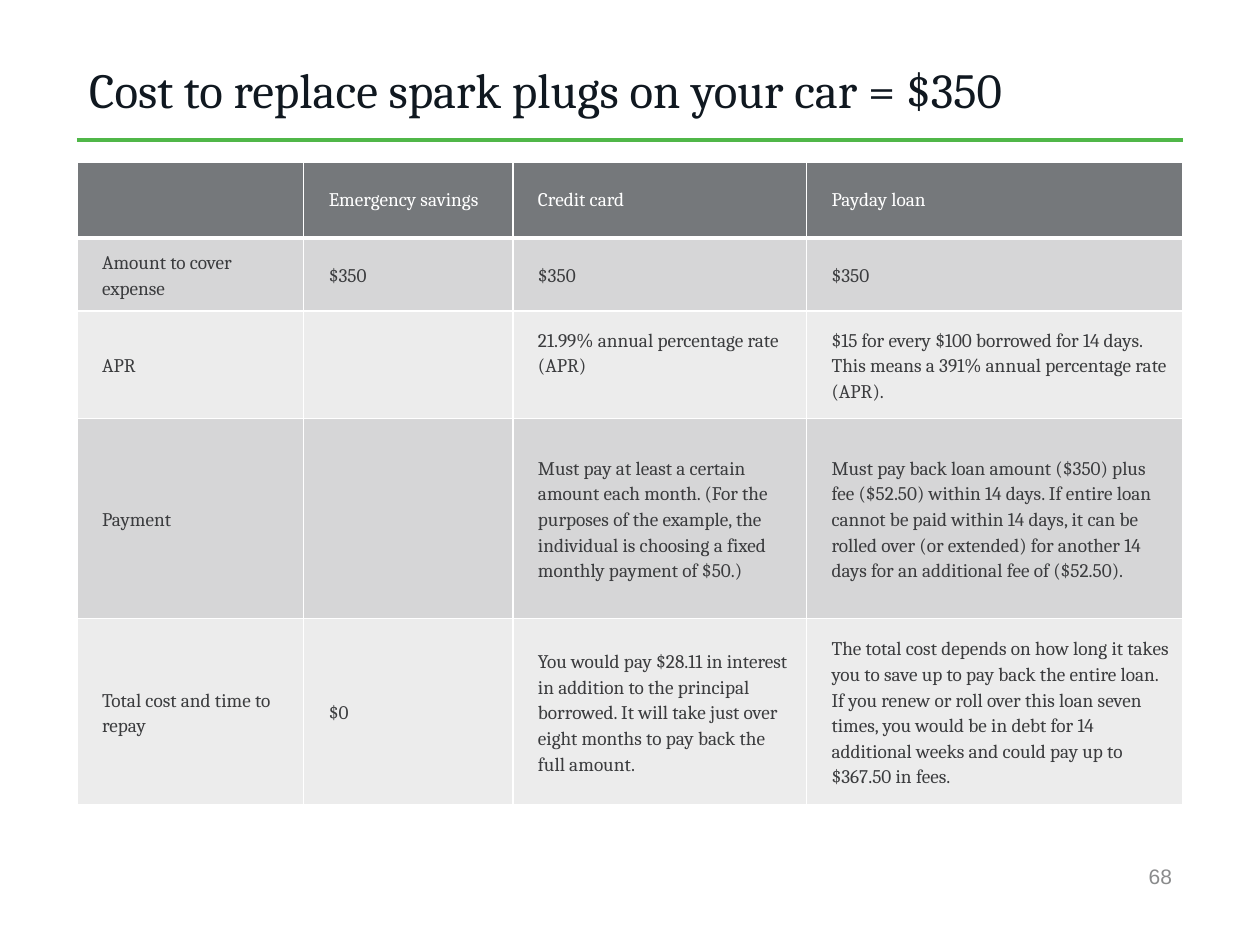
from lxml import etree
from pptx import Presentation
from pptx.dml.color import RGBColor
from pptx.enum.shapes import MSO_CONNECTOR
from pptx.enum.text import MSO_ANCHOR, PP_ALIGN
from pptx.oxml.ns import qn
from pptx.util import Inches, Pt

STRAIGHT = MSO_CONNECTOR.STRAIGHT
MIDDLE = MSO_ANCHOR.MIDDLE
LEFT, RIGHT = PP_ALIGN.LEFT, PP_ALIGN.RIGHT

COLORS = {
    "title": "101820",
    "rule": "50B748",
    "page": "8A8B8C",
    "header": "75787B",
    "dark_band": "D6D6D7",
    "light_band": "ECECEC",
    "body": "3B3C3E",
    "white": "FFFFFF",
}
COLUMN_WIDTHS = [1.8, 1.66, 2.33, 2.99]
ROW_HEIGHTS = [0.6, 0.58, 0.85, 1.59, 1.48]
COSTS = [
    ["", "Emergency savings", "Credit card", "Payday loan"],
    ["Amount to cover expense", "$350", "$350", "$350"],
    [
        "APR",
        "",
        "21.99% annual percentage rate (APR)",
        "$15 for every $100 borrowed for 14 days. This means a 391% annual "
        "percentage rate (APR).",
    ],
    [
        "Payment",
        "",
        "Must pay at least a certain amount each month. (For the purposes of the "
        "example, the individual is choosing a fixed monthly payment of $50.)",
        "Must pay back loan amount ($350) plus fee ($52.50) within 14 days. If "
        "entire loan cannot be paid within 14 days, it can be rolled over (or "
        "extended) for another 14 days for an additional fee of ($52.50).",
    ],
    [
        "Total cost and time to repay",
        "$0",
        "You would pay $28.11 in interest in addition to the principal borrowed. "
        "It will take just over eight months to pay back the full amount.",
        "The total cost depends on how long it takes you to save up to pay back "
        "the entire loan. If you renew or roll over this loan seven times, you "
        "would be in debt for 14 additional weeks and could pay up to $367.50 in "
        "fees.",
    ],
]
CREDIT_CARD_APR = (2, 2)


def rgb(name):
    """Return the named colour."""
    return RGBColor.from_string(COLORS[name])


def add_run(paragraph, text, size, color, face="Cambria"):
    """Add one styled run to a paragraph."""
    run = paragraph.add_run()
    run.text = text
    run.font.name = face
    run.font.size = Pt(size)
    run.font.color.rgb = rgb(color)


def add_label(slide, box, text, size, color, face, align):
    """Place one line of text, centred vertically in its box."""
    frame = slide.shapes.add_textbox(*map(Inches, box)).text_frame
    frame.word_wrap = True
    frame.vertical_anchor = MIDDLE
    frame.paragraphs[0].alignment = align
    add_run(frame.paragraphs[0], text, size, color, face)


def add_heading(slide, box):
    """Place the title with the green rule along the bottom of its box."""
    left, top, width, height = box
    text = "Cost to replace spark plugs on your car = $350"
    add_label(slide, box, text, 28, "title", "Cambria", LEFT)
    bottom = Inches(top + height)
    rule = slide.shapes.add_connector(
        STRAIGHT, Inches(left), bottom, Inches(left + width), bottom
    )
    rule.line.color.rgb = rgb("rule")
    rule.line.width = Pt(2)
    etree.SubElement(rule._element.spPr, qn("a:effectLst"))


def add_borders(cell, row):
    """Give a cell white borders, heavier between header and body."""
    widths = {
        "lnL": 1,
        "lnR": 1,
        "lnT": 3 if row == 1 else 1,
        "lnB": 3 if row == 0 else 1,
    }
    properties = cell._tc.get_or_add_tcPr()
    for side, width in widths.items():
        border = etree.SubElement(properties, qn(f"a:{side}"), w=str(Pt(width)))
        fill = etree.SubElement(border, qn("a:solidFill"))
        etree.SubElement(fill, qn("a:srgbClr"), val=COLORS["white"])


def fill_cell(cell, row, column, text):
    """Style one cell and write its text."""
    add_borders(cell, row)
    bands = ["light_band", "dark_band"]
    cell.fill.solid()
    cell.fill.fore_color.rgb = rgb("header" if row == 0 else bands[row % 2])
    cell.vertical_anchor = MIDDLE
    cell.margin_left, cell.margin_right = Inches(0.2), Inches(0.1)
    inset = 0 if row and column > 1 else 0.05
    cell.margin_top = cell.margin_bottom = Inches(inset)
    if (row, column) == CREDIT_CARD_APR:
        cell.margin_bottom = Inches(0.2)
    if text:
        paragraph = cell.text_frame.paragraphs[0]
        if row:
            paragraph.line_spacing = 1.15
        add_run(paragraph, text, 11, "body" if row else "white")


def add_cost_table(slide, box):
    """Place the table comparing three ways to pay."""
    table = slide.shapes.add_table(
        len(COSTS), len(COLUMN_WIDTHS), *map(Inches, box)
    ).table
    for column, width in zip(table.columns, COLUMN_WIDTHS):
        column.width = Inches(width)
    for row, height in zip(table.rows, ROW_HEIGHTS):
        row.height = Inches(height)
    for row, texts in enumerate(COSTS):
        for column, text in enumerate(texts):
            fill_cell(table.cell(row, column), row, column, text)


def main():
    """Build and save the slide."""
    deck = Presentation()
    deck.slide_width, deck.slide_height = Inches(10), Inches(7.5)
    slide = deck.slides.add_slide(deck.slide_layouts[6])
    add_heading(slide, (0.61, 0.3, 8.78, 0.81))
    add_cost_table(slide, (0.61, 1.29, sum(COLUMN_WIDTHS), sum(ROW_HEIGHTS)))
    add_label(slide, (6.23, 6.75, 3.17, 0.4), "68", 12, "page", "Arial", RIGHT)
    deck.save("out.pptx")


if __name__ == "__main__":
    main()
